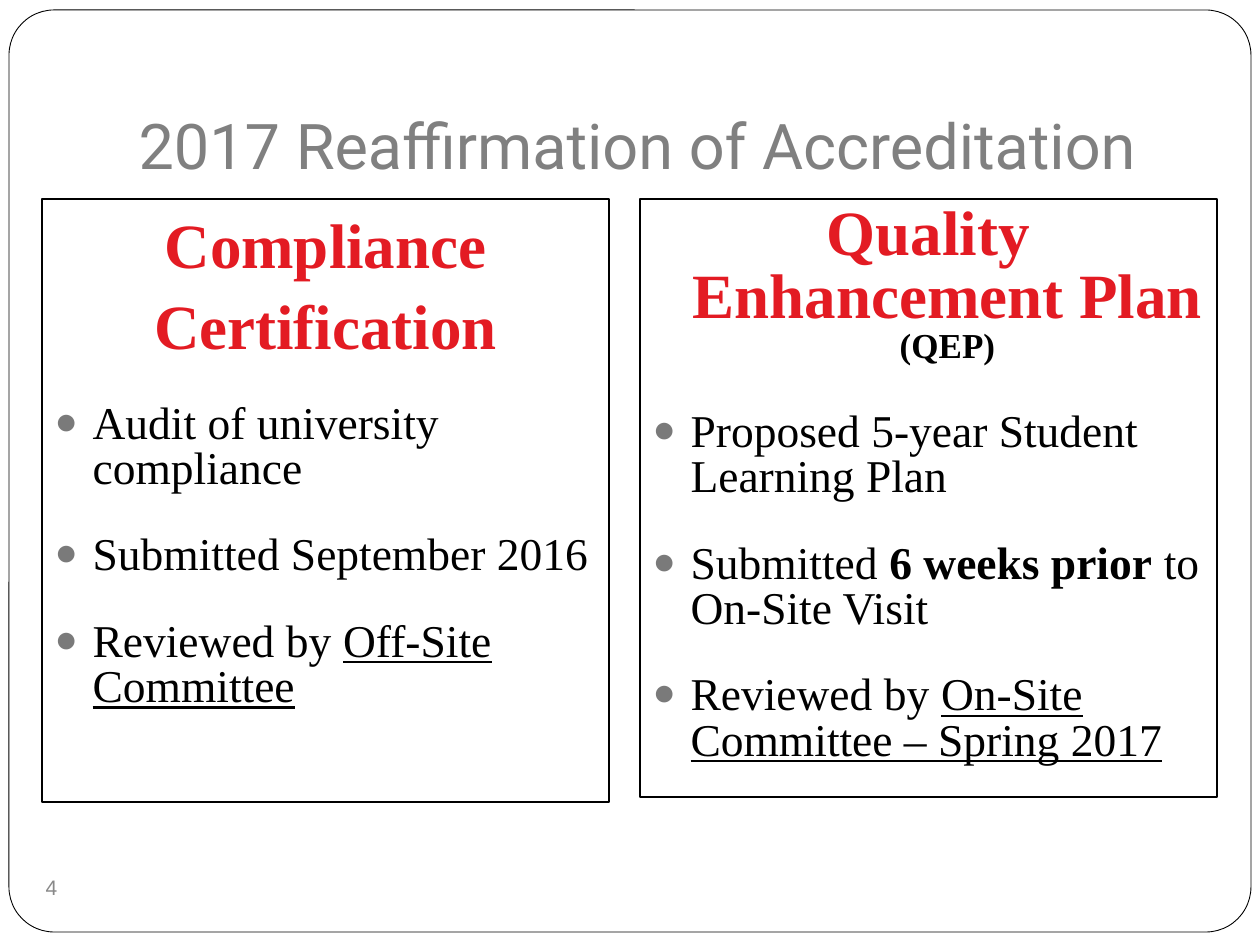
from dataclasses import dataclass

from lxml.etree import SubElement
from pptx import Presentation
from pptx.dml.color import RGBColor
from pptx.enum.shapes import MSO_SHAPE
from pptx.enum.text import MSO_ANCHOR, MSO_AUTO_SIZE, PP_ALIGN
from pptx.oxml.ns import qn
from pptx.util import Emu, Pt

PX = 7257.6


@dataclass(frozen=True)
class Theme:
    white: str = "FFFFFF"
    ink: str = "000000"
    title: str = "808080"
    number: str = "898989"
    accent: str = "E31B23"
    bullet: str = "7A7A7A"
    title_font: str = "Roboto"
    body_font: str = "Times New Roman"
    number_font: str = "Arial"
    heading_size: int = 36
    body_size: int = 26
    note_size: int = 20
    number_size: int = 12
    tight: float = 0.83
    item_gap: float = 23.5


T = Theme()


def px(n):
    return Emu(round(n * PX))


def place(sp, left, top, width, height):
    sp.left, sp.top, sp.width, sp.height = map(px, (left, top, width, height))


def outline(sp, width):
    sp.line.color.rgb = RGBColor.from_string(T.ink)
    sp.line.width = Pt(width)


def add_run(p, text, size, color, font=T.body_font, bold=False, underline=False):
    r = p.add_run()
    r.text = text
    r.font.name = font
    r.font.size = Pt(size)
    r.font.color.rgb = RGBColor.from_string(color)
    r.font.bold = bold
    r.font.underline = underline


def format_paragraph(p, align, before, spacing, indent=38, bullet=False):
    p.alignment = align
    p.space_before = Pt(before)
    p.space_after = Pt(0)
    p.line_spacing = spacing
    pPr = p._p.get_or_add_pPr()
    pPr.set("marL", str(px(indent)))
    pPr.set("indent", str(px(-indent)))
    if bullet:
        clr = SubElement(pPr, qn("a:buClr"))
        SubElement(clr, qn("a:srgbClr"), val=T.bullet)
        SubElement(pPr, qn("a:buSzPct"), val="85000")
        SubElement(pPr, qn("a:buFont"), typeface=T.number_font)
        SubElement(pPr, qn("a:buChar"), char="●")
    else:
        SubElement(pPr, qn("a:buNone"))


def next_paragraph(tf):
    p = tf.paragraphs[0]
    return tf.add_paragraph() if p.runs else p


def add_heading(tf, text, before, spacing, indent, note=""):
    p = next_paragraph(tf)
    format_paragraph(p, PP_ALIGN.CENTER, before, spacing, indent)
    add_run(p, text, T.heading_size, T.accent, bold=True)
    if note:
        add_run(p, " ", T.note_size, T.accent, bold=True)
        add_run(p, note, T.note_size, T.ink, bold=True)


def add_items(tf, items, first_gap):
    for i, runs in enumerate(items):
        p = next_paragraph(tf)
        gap = T.item_gap if i else first_gap
        format_paragraph(p, PP_ALIGN.LEFT, gap, T.tight, bullet=True)
        for text, style in runs:
            add_run(p, text, T.body_size, T.ink, **style)


def set_panel(sp, *box):
    place(sp, *box)
    outline(sp, 0.75)
    tf = sp.text_frame
    tf.word_wrap = True
    tf.auto_size = MSO_AUTO_SIZE.NONE
    tf.vertical_anchor = MSO_ANCHOR.TOP
    return tf


def set_title(sp, text):
    place(sp, 126, 38, 1071, 157)
    tf = sp.text_frame
    tf.auto_size = MSO_AUTO_SIZE.NONE
    tf.vertical_anchor = MSO_ANCHOR.BOTTOM
    tf.margin_bottom = px(13)
    p = tf.paragraphs[0]
    p.alignment = PP_ALIGN.LEFT
    add_run(p, text, T.heading_size, T.title, T.title_font)


def add_frame(s):
    sp = s.shapes.add_shape(MSO_SHAPE.ROUNDED_RECTANGLE, 0, 0, 0, 0)
    place(sp, 9, 10, 1242, 922)
    sp.adjustments[0] = 0.049
    sp.shadow.inherit = False
    sp.fill.solid()
    sp.fill.fore_color.rgb = RGBColor.from_string(T.white)
    outline(sp, 0.5)
    s.shapes._spTree.insert(2, sp._element)


def add_number(s, text):
    sp = s.shapes.add_shape(MSO_SHAPE.OVAL, 0, 0, 0, 0)
    place(sp, 20, 856, 63, 63)
    sp.shadow.inherit = False
    sp.fill.background()
    sp.line.fill.background()
    tf = sp.text_frame
    tf.margin_left = tf.margin_right = tf.margin_top = tf.margin_bottom = 0
    tf.vertical_anchor = MSO_ANCHOR.MIDDLE
    p = tf.paragraphs[0]
    p.alignment = PP_ALIGN.CENTER
    add_run(p, text, T.number_size, T.number, T.number_font)


def main():
    prs = Presentation()
    prs.slide_width, prs.slide_height = px(1260), px(945)
    s = prs.slides.add_slide(prs.slide_layouts[3])
    title, left, right = s.placeholders
    plain, bold, under = {}, {"bold": True}, {"underline": True}

    add_frame(s)
    set_title(title, "2017 Reaffirmation of Accreditation")
    add_number(s, "4")

    tf = set_panel(left, 42, 199, 567, 603)
    for word in ("Compliance", "Certification"):
        add_heading(tf, word, 3, 1.0, 0)
    add_items(tf, [
        [("Audit of university compliance", plain)],
        [("Submitted September 2016", plain)],
        [("Reviewed by ", plain), ("Off-Site Committee", under)],
    ], T.item_gap)

    tf = set_panel(right, 640, 199, 577, 598)
    add_heading(tf, "Quality Enhancement Plan", 2, T.tight, 38, "(QEP)")
    add_items(tf, [
        [("Proposed 5-year Student Learning Plan", plain)],
        [("Submitted ", plain), ("6 weeks prior", bold), (" to On-Site Visit", plain)],
        [("Reviewed by ", plain), ("On-Site Committee – Spring 2017", under)],
    ], 26)

    prs.save("out.pptx")


if __name__ == "__main__":
    main()
